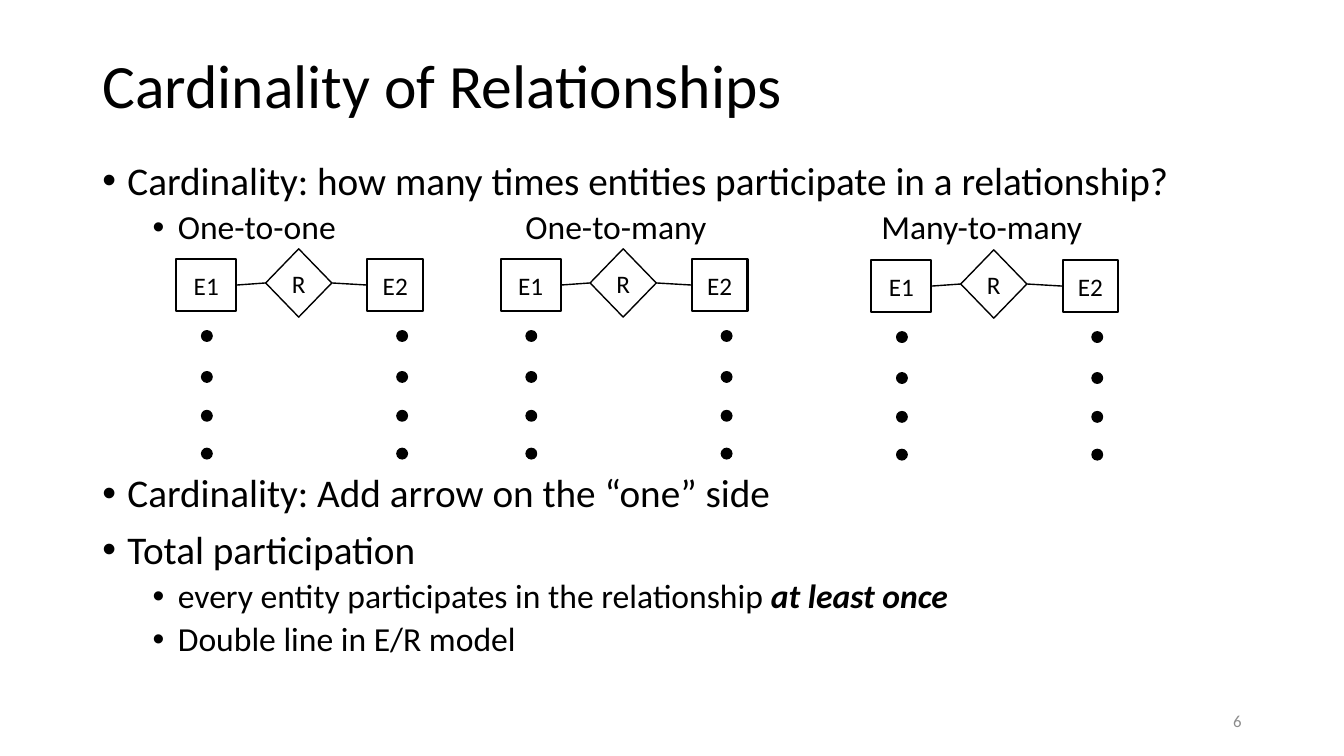
from lxml.etree import SubElement as Sub
from pptx import Presentation
from pptx.dml.color import RGBColor
from pptx.enum.shapes import MSO_CONNECTOR as Conn, MSO_SHAPE as Shape
from pptx.enum.text import MSO_ANCHOR as Anchor, MSO_AUTO_SIZE as Auto, PP_ALIGN as Align
from pptx.oxml.ns import qn
from pptx.util import Emu, Pt

BLACK = RGBColor(0x00, 0x00, 0x00)
WHITE = RGBColor(0xFF, 0xFF, 0xFF)
GRAY = RGBColor(0x8C, 0x8C, 0x8C)
FONT = "Calibri"
TABS = (403, 742)
DOT_ROWS = (315, 354, 391, 427)


def px(n):
    return Emu(n * 9525)


def write(para, text, size=18, color=BLACK, align=Align.LEFT, strong=False):
    para.alignment = align
    run = para.add_run()
    run.text = text
    font = run.font
    font.name, font.size, font.color.rgb = FONT, Pt(size), color
    font.bold = font.italic = strong


class Deck:
    def __init__(self, wide, high):
        self.prs = Presentation()
        self.prs.slide_width, self.prs.slide_height = px(wide), px(high)
        self.slide = self.prs.slides.add_slide(self.prs.slide_layouts[5])
        self.shapes = self.slide.shapes

    def frame(self, item, anchor):
        frame = item.text_frame
        frame.word_wrap = True
        frame.auto_size = Auto.NONE
        frame.vertical_anchor = anchor
        return frame

    def title(self, text, x, y, w, h):
        item = self.shapes.title
        item.left, item.top, item.width, item.height = map(px, (x, y, w, h))
        para = self.frame(item, Anchor.MIDDLE).paragraphs[0]
        para.line_spacing = 0.9
        write(para, text, size=44)

    def box(self, x, y, w, h, anchor=Anchor.TOP):
        item = self.shapes.add_textbox(*map(px, (x, y, w, h)))
        return self.frame(item, anchor)

    def bullet(self, para, parts, level=0, before=None):
        para.level = level
        para.line_spacing = 0.9
        para.space_before = Pt(before or (10, 5)[level])
        for text, strong in parts:
            write(para, text, size=(28, 24)[level], strong=strong)
        props = para._p.get_or_add_pPr()
        props.set("marL", str(px(24 + 48 * level)))
        props.set("indent", str(px(-24)))
        Sub(props, qn("a:buFont"), typeface="Arial")
        Sub(props, qn("a:buChar"), char="•")
        if "\t" in parts[0][0]:
            tabs = Sub(props, qn("a:tabLst"))
            for stop in TABS:
                Sub(tabs, qn("a:tab"), pos=str(px(stop)), algn="l")

    def shape(self, kind, x, y, w, h, text="", fill=None, line=1):
        item = self.shapes.add_shape(kind, *map(px, (x, y, w, h)))
        item.shadow.inherit = False
        if fill is None:
            item.fill.background()
        else:
            item.fill.solid()
            item.fill.fore_color.rgb = fill
        item.line.color.rgb = BLACK
        item.line.width = Pt(line)
        if text:
            frame = self.frame(item, Anchor.MIDDLE)
            frame.word_wrap = False
            write(frame.paragraphs[0], text, align=Align.CENTER)
        return item

    def link(self, left, right):
        item = self.shapes.add_connector(Conn.STRAIGHT, 0, 0, 0, 0)
        item.begin_connect(left, 3)
        item.end_connect(right, 1)
        item.line.color.rgb = BLACK
        item.line.width = Pt(1)
        Sub(item._element.spPr, qn("a:effectLst"))

    def model(self, x, drop):
        first = self.shape(Shape.RECTANGLE, x, 247 + drop, 57, 49, "E1", line=1.5)
        last = self.shape(Shape.RECTANGLE, x + 182, 247 + drop, 53, 49, "E2", line=1.5)
        rel = self.shape(Shape.DIAMOND, x + 85, 237 + drop, 63, 65, "R", fill=WHITE)
        self.link(first, rel)
        self.link(rel, last)
        for left in (x + 24, x + 210):
            for top in DOT_ROWS:
                self.shape(Shape.OVAL, left, top + drop, 10, 10, fill=BLACK)


def main():
    deck = Deck(1280, 720)
    deck.title("Cardinality of Relationships", 88, 38, 1104, 93)

    points = (
        ([("Cardinality: how many times entities participate in a relationship?", False)], 0, None),
        ([("One-to-one\tOne-to-many\tMany-to-many", False)], 1, None),
        ([("Cardinality: Add arrow on the “one” side", False)], 0, 162),
        ([("Total participation", False)], 0, None),
        ([("every entity participates in the relationship ", False), ("at least once", True)], 1, None),
        ([("Double line in E/R model", False)], 1, None),
    )
    body = deck.box(88, 149, 1104, 500)
    for n, (parts, level, before) in enumerate(points):
        para = body.add_paragraph() if n else body.paragraphs[0]
        deck.bullet(para, parts, level, before)

    for x, drop in ((168, 0), (477, 0), (830, 1)):
        deck.model(x, drop)

    page = deck.box(904, 667, 288, 38, Anchor.MIDDLE)
    write(page.paragraphs[0], "6", size=12, color=GRAY, align=Align.RIGHT)
    deck.prs.save("out.pptx")


if __name__ == "__main__":
    main()
